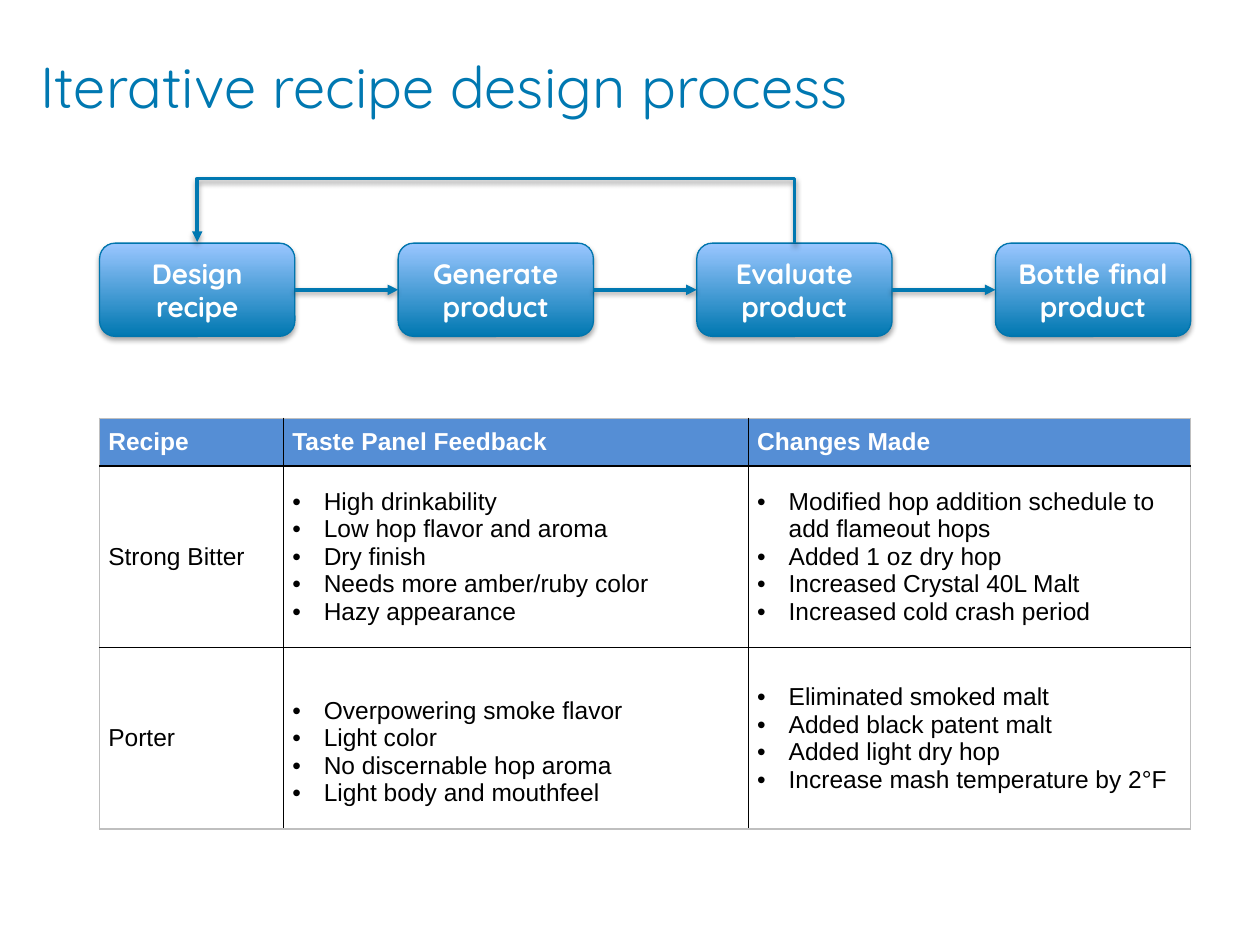
from dataclasses import dataclass
from itertools import pairwise

from pptx import Presentation
from pptx.dml.color import RGBColor
from pptx.enum.shapes import MSO_CONNECTOR, MSO_SHAPE
from pptx.enum.text import MSO_ANCHOR, MSO_AUTO_SIZE, PP_ALIGN
from pptx.oxml.ns import qn
from pptx.oxml.xmlchemy import OxmlElement
from pptx.shapes.autoshape import Shape
from pptx.shapes.connector import Connector
from pptx.slide import Slide
from pptx.table import _Cell
from pptx.text.text import _Paragraph
from pptx.util import Inches, Pt


@dataclass(frozen=True)
class Theme:
    accent: str = "0078B1"
    box_line: str = "0075AD"
    box_top: str = "9AC6FF"
    header: str = "558ED5"
    white: str = "FFFFFF"
    black: str = "000000"
    frame: str = "BFBFBF"
    display: str = "Quicksand"
    body: str = "Arial"
    title_size: int = 33
    box_size: int = 16
    table_size: int = 14


@dataclass(frozen=True)
class Recipe:
    name: str
    feedback: list[str]
    changes: list[str]
    feedback_top: float = 0.05


THEME = Theme()
STEPS = ["Design recipe", "Generate product", "Evaluate product", "Bottle final product"]
BOX_LEFT, BOX_TOP, BOX_W, BOX_H, BOX_PITCH = 0.79, 1.93, 1.55, 0.74, 2.37
HEADERS = ["Recipe", "Taste Panel Feedback", "Changes Made"]
COL_WIDTHS = [1.46, 3.69, 3.51]
ROW_HEIGHTS = [0.38, 1.44, 1.44]
RECIPES = [
    Recipe(
        "Strong Bitter",
        ["High drinkability", "Low hop flavor and aroma", "Dry finish",
         "Needs more amber/ruby color", "Hazy appearance"],
        ["Modified hop addition schedule to add flameout hops", "Added 1 oz dry hop",
         "Increased Crystal 40L Malt", "Increased cold crash period"],
    ),
    Recipe(
        "Porter",
        ["Overpowering smoke flavor", "Light color", "No discernable hop aroma",
         "Light body and mouthfeel"],
        ["Eliminated smoked malt", "Added black patent malt", "Added light dry hop",
         "Increase mash temperature by 2°F"],
        feedback_top=0.27,
    ),
]


def rgb(color: str) -> RGBColor:
    return RGBColor.from_string(color)


def add_child(parent, tag: str, **attrs):
    child = OxmlElement(tag)
    for name, value in attrs.items():
        child.set(name, str(value))
    parent.append(child)
    return child


def style_text(p: _Paragraph, face: str, size: int, color: str, bold: bool = False) -> None:
    p.font.name, p.font.size, p.font.bold = face, Pt(size), bold
    p.font.color.rgb = rgb(color)


def add_shadow(effects, distance: float, opacity: int) -> None:
    shadow = add_child(effects, "a:outerShdw", blurRad=Pt(3.1), dist=Pt(distance),
                       dir=90 * 60000, rotWithShape=0)
    tint = add_child(shadow, "a:srgbClr", val=THEME.black)
    add_child(tint, "a:alpha", val=opacity * 1000)


def add_title(slide: Slide, text: str) -> None:
    title = slide.shapes.title
    title.left, title.top = Inches(0.32), Inches(0.34)
    title.width, title.height = Inches(9), Inches(0.67)
    tf = title.text_frame
    tf.text = text
    tf.auto_size = MSO_AUTO_SIZE.NONE
    tf.vertical_anchor = MSO_ANCHOR.MIDDLE
    tf.margin_left = 0
    p = tf.paragraphs[0]
    p.alignment = PP_ALIGN.LEFT
    style_text(p, THEME.display, THEME.title_size, THEME.accent)


def add_step(slide: Slide, index: int, text: str) -> Shape:
    sp = slide.shapes.add_shape(
        MSO_SHAPE.ROUNDED_RECTANGLE, Inches(BOX_LEFT + index * BOX_PITCH),
        Inches(BOX_TOP), Inches(BOX_W), Inches(BOX_H))
    sp.fill.gradient()
    sp.fill.gradient_angle = 90
    for stop, color in zip(sp.fill.gradient_stops, (THEME.accent, THEME.box_top)):
        stop.color.rgb = rgb(color)
    sp.line.color.rgb = rgb(THEME.box_line)
    sp.line.width = Pt(0.75)
    sp.shadow.inherit = False
    add_shadow(sp._element.spPr.find(qn("a:effectLst")), 1.8, 35)
    tf = sp.text_frame
    tf.text = text
    tf.word_wrap = True
    tf.vertical_anchor = MSO_ANCHOR.MIDDLE
    p = tf.paragraphs[0]
    p.alignment = PP_ALIGN.CENTER
    style_text(p, THEME.display, THEME.box_size, THEME.white, bold=True)
    return sp


def style_arrow(arrow: Connector) -> None:
    arrow.line.color.rgb = rgb(THEME.accent)
    arrow.line.width = Pt(2)
    add_child(arrow.line._get_or_add_ln(), "a:tailEnd", type="triangle")
    add_shadow(add_child(arrow._element.spPr, "a:effectLst"), 1.6, 38)


def add_arrow(slide: Slide, source: Shape, target: Shape) -> None:
    arrow = slide.shapes.add_connector(MSO_CONNECTOR.STRAIGHT, 0, 0, 0, 0)
    arrow.begin_connect(source, 3)
    arrow.end_connect(target, 1)
    style_arrow(arrow)


def add_feedback_loop(slide: Slide, source: Shape, target: Shape, rise: float) -> None:
    """Elbow arrow from the top of source, up by rise, and down onto target.

    The elbow preset runs sideways, so it is turned upright about its centre.
    """
    thin = Inches(0.01)
    span = source.left - target.left
    mid_x = (source.left + target.left + source.width) // 2
    mid_y = source.top - thin // 2
    left, top = mid_x - thin // 2, mid_y - span // 2
    arrow = slide.shapes.add_connector(
        MSO_CONNECTOR.ELBOW, left, top + span, left + thin, top)
    spPr = arrow._element.spPr
    spPr.xfrm.set("rot", str(270 * 60000))
    guides = spPr.find(qn("a:prstGeom")).get_or_add_avLst()
    add_child(guides, "a:gd", name="adj1", fmla=f"val {round(Inches(rise) / thin * 100000)}")
    style_arrow(arrow)


def add_borders(cell: _Cell, row: int, col: int) -> None:
    """Grey on the outer frame, black between cells."""
    outer = {"L": col == 0, "R": col == len(COL_WIDTHS) - 1,
             "T": row == 0, "B": row == len(ROW_HEIGHTS) - 1}
    tcPr = cell._tc.get_or_add_tcPr()
    for side, on_frame in outer.items():
        ln = add_child(tcPr, f"a:ln{side}", w=Pt(1))
        fill = add_child(ln, "a:solidFill")
        add_child(fill, "a:srgbClr", val=THEME.frame if on_frame else THEME.black)


def fill_cell(cell: _Cell, content: str | list[str], header: bool, top: float) -> None:
    cell.vertical_anchor = MSO_ANCHOR.MIDDLE
    cell.margin_left = cell.margin_right = Inches(0.07)
    cell.margin_top, cell.margin_bottom = Inches(top), Inches(0.05)
    if header:
        cell.fill.solid()
        cell.fill.fore_color.rgb = rgb(THEME.header)
    else:
        cell.fill.background()
    bulleted = isinstance(content, list)
    cell.text_frame.text = "\n".join(content) if bulleted else content
    for p in cell.text_frame.paragraphs:
        if bulleted:
            pPr = p._p.get_or_add_pPr()
            pPr.set("marL", str(Inches(0.25)))
            pPr.set("indent", str(-Inches(0.25)))
            add_child(pPr, "a:buFont", typeface=THEME.body)
            add_child(pPr, "a:buChar", char="•")
        style_text(p, THEME.body, THEME.table_size,
                   THEME.white if header else THEME.black, bold=header)


def add_recipe_table(slide: Slide) -> None:
    rows = [HEADERS] + [[r.name, r.feedback, r.changes] for r in RECIPES]
    table = slide.shapes.add_table(
        len(rows), len(HEADERS), Inches(BOX_LEFT), Inches(3.32),
        Inches(sum(COL_WIDTHS)), Inches(sum(ROW_HEIGHTS))).table
    table.horz_banding = False
    for column, width in zip(table.columns, COL_WIDTHS):
        column.width = Inches(width)
    for i, (row, height) in enumerate(zip(rows, ROW_HEIGHTS)):
        table.rows[i].height = Inches(height)
        for j, content in enumerate(row):
            top = RECIPES[i - 1].feedback_top if i and j == 1 else 0.05
            add_borders(table.cell(i, j), i, j)
            fill_cell(table.cell(i, j), content, i == 0, top)


def main() -> None:
    prs = Presentation()
    prs.slide_width, prs.slide_height = Inches(10), Inches(7.5)
    slide = prs.slides.add_slide(prs.slide_layouts[5])
    add_title(slide, "Iterative recipe design process")
    add_recipe_table(slide)
    steps = [add_step(slide, i, text) for i, text in enumerate(STEPS)]
    for source, target in pairwise(steps):
        add_arrow(slide, source, target)
    add_feedback_loop(slide, steps[2], steps[0], rise=0.52)
    prs.save("out.pptx")


if __name__ == "__main__":
    main()
